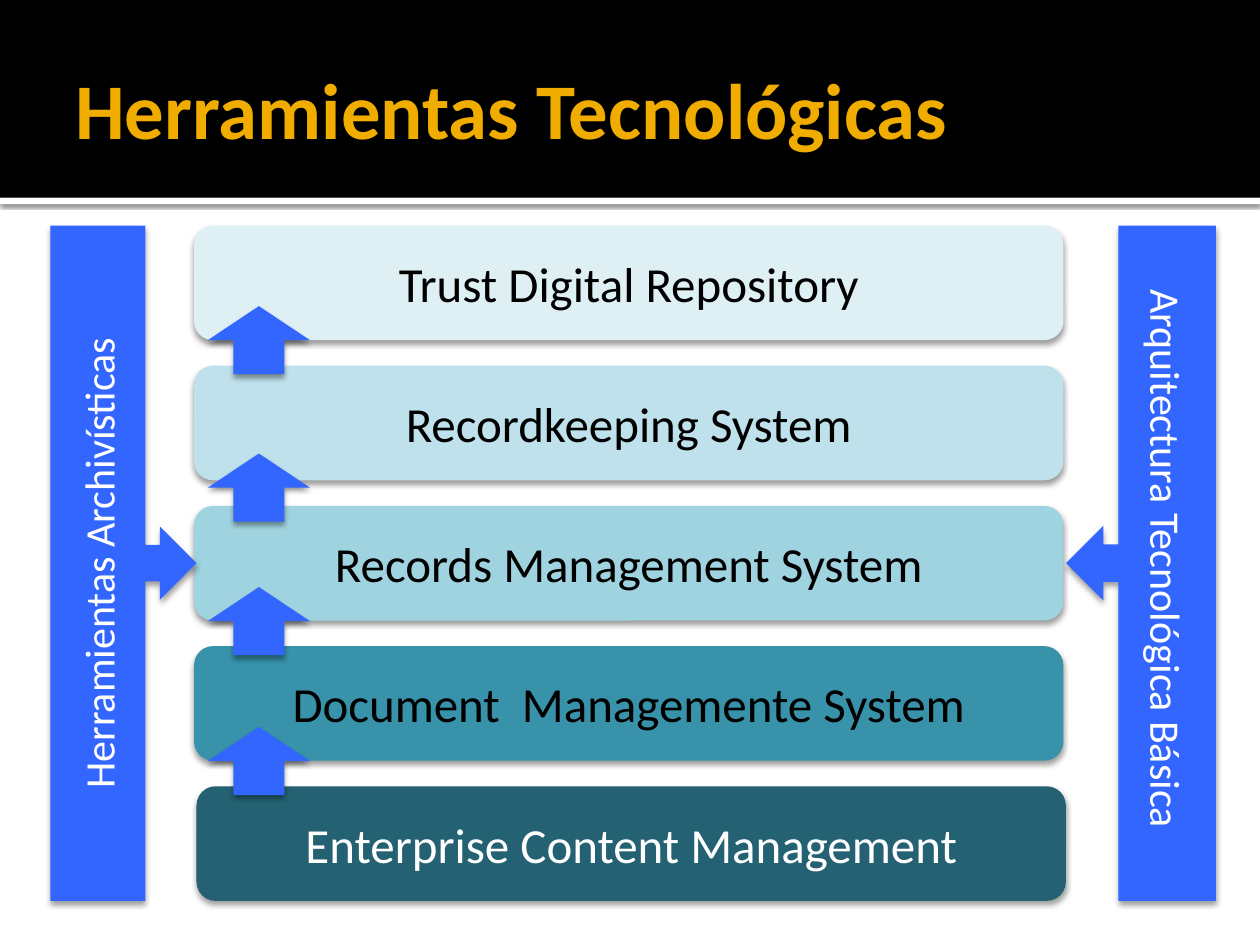
from lxml import etree
from pptx import Presentation
from pptx.dml.color import RGBColor
from pptx.enum.shapes import MSO_SHAPE
from pptx.enum.text import MSO_ANCHOR, PP_ALIGN
from pptx.oxml.ns import qn
from pptx.util import Inches, Pt

RECT, ROUNDED = MSO_SHAPE.RECTANGLE, MSO_SHAPE.ROUNDED_RECTANGLE
UP_ARROW = MSO_SHAPE.UP_ARROW
RIGHT_CALLOUT = MSO_SHAPE.RIGHT_ARROW_CALLOUT
LEFT_CALLOUT = MSO_SHAPE.LEFT_ARROW_CALLOUT
MIDDLE = MSO_ANCHOR.MIDDLE
LEFT, CENTER = PP_ALIGN.LEFT, PP_ALIGN.CENTER

COLORS = {
    "black": "000000", "white": "FFFFFF", "gold": "F0AD00", "blue": "3366FF",
    "layer1": "DFF0F5", "layer2": "BFE1EB", "layer3": "A0D3E0",
    "layer4": "3792AA", "layer5": "246172",
}
# Shadows: opacity in percent, blur and distance in points
SOFT_SHADOW = (38, 3.1, 2)
RULE_SHADOW = (60, 2.5, 0.8)

# Layers from top to bottom: text, fill, text colour, shift to the right
LAYERS = [
    ("Trust Digital Repository", "layer1", "black", 0),
    ("Recordkeeping System", "layer2", "black", 0),
    ("Records Management System", "layer3", "black", 0),
    ("Document  Managemente System", "layer4", "black", 0),
    ("Enterprise Content Management", "layer5", "white", 0.02),
]
LAYER_HEIGHT = 0.91
ARROW_TOPS = [0.64, 1.81, 2.87, 3.98]  # from the top of the stack


def color(name):
    return RGBColor.from_string(COLORS[name])


def add_shadow(shape, opacity, blur, distance):
    effects = shape._element.spPr.find(qn("a:effectLst"))
    outer = etree.SubElement(
        effects, qn("a:outerShdw"), blurRad=str(Pt(blur)), dist=str(Pt(distance)),
        dir="5400000", rotWithShape="0")
    tint = etree.SubElement(outer, qn("a:srgbClr"), val=COLORS["black"])
    etree.SubElement(tint, qn("a:alpha"), val=str(opacity * 1000))


def add_block(page, kind, box, fill, shadow=SOFT_SHADOW):
    shape = page.shapes.add_shape(kind, *(Inches(length) for length in box))
    shape.shadow.inherit = False
    shape.fill.solid()
    shape.fill.fore_color.rgb = color(fill)
    shape.line.fill.background()
    if shadow:
        add_shadow(shape, *shadow)
    return shape


def write(shape, text, size, tone, align=CENTER, bold=False):
    frame = shape.text_frame
    frame.word_wrap = True
    frame.vertical_anchor = MIDDLE
    para = frame.paragraphs[0]
    para.alignment = align
    span = para.add_run()
    span.text = text
    font_format = {"name": "Calibri", "size": Pt(size), "bold": bold}
    for key, value in font_format.items():
        setattr(span.font, key, value)
    span.font.color.rgb = color(tone)


def add_header(page, box):
    left, top, width, height = box
    # White rule under the black band
    add_block(page, RECT, (left, top + height, width, 0.05), "white", RULE_SHADOW)
    add_block(page, RECT, box, "black", None)
    title = page.shapes.add_textbox(
        Inches(left + 0.5), Inches(top + 0.17), Inches(width - 1), Inches(height - 0.2))
    margins = {"margin_left": 0.1, "margin_top": 0.05,
               "margin_right": 0.05, "margin_bottom": 0.05}
    for key, value in margins.items():
        setattr(title.text_frame, key, Inches(value))
    write(title, "Herramientas Tecnológicas", 45, "gold", LEFT, True)


def add_stack(page, box):
    left, top, width, height = box
    pitch = (height - LAYER_HEIGHT) / (len(LAYERS) - 1)
    for index, (text, fill, tone, shift) in enumerate(LAYERS):
        place = (left + shift, top + index * pitch, width, LAYER_HEIGHT)
        write(add_block(page, ROUNDED, place, fill), text, 28, tone)
    # Arrows rising from each layer to the next
    for offset in ARROW_TOPS:
        add_block(page, UP_ARROW, (left + 0.11, top + offset, 0.81, 0.54), "blue")


def add_side_callout(page, box, kind, direction, text):
    callout = add_block(page, kind, box, "blue")
    write(callout, text, 24, "white")
    callout.text_frame._txBody.bodyPr.set("vert", direction)


def main():
    deck = Presentation()
    deck.slide_width, deck.slide_height = Inches(10), Inches(7.5)
    page = deck.slides.add_slide(deck.slide_layouts[6])
    add_header(page, (0, 0, 10, 1.57))
    add_stack(page, (1.54, 1.79, 6.9, 5.36))
    add_side_callout(page, (0.4, 1.79, 1.16, 5.36), RIGHT_CALLOUT, "vert270",
                     "Herramientas Archivísticas")
    add_side_callout(page, (8.46, 1.79, 1.19, 5.36), LEFT_CALLOUT, "vert",
                     "Arquitectura Tecnológica Básica ")
    deck.save("out.pptx")


if __name__ == "__main__":
    main()
